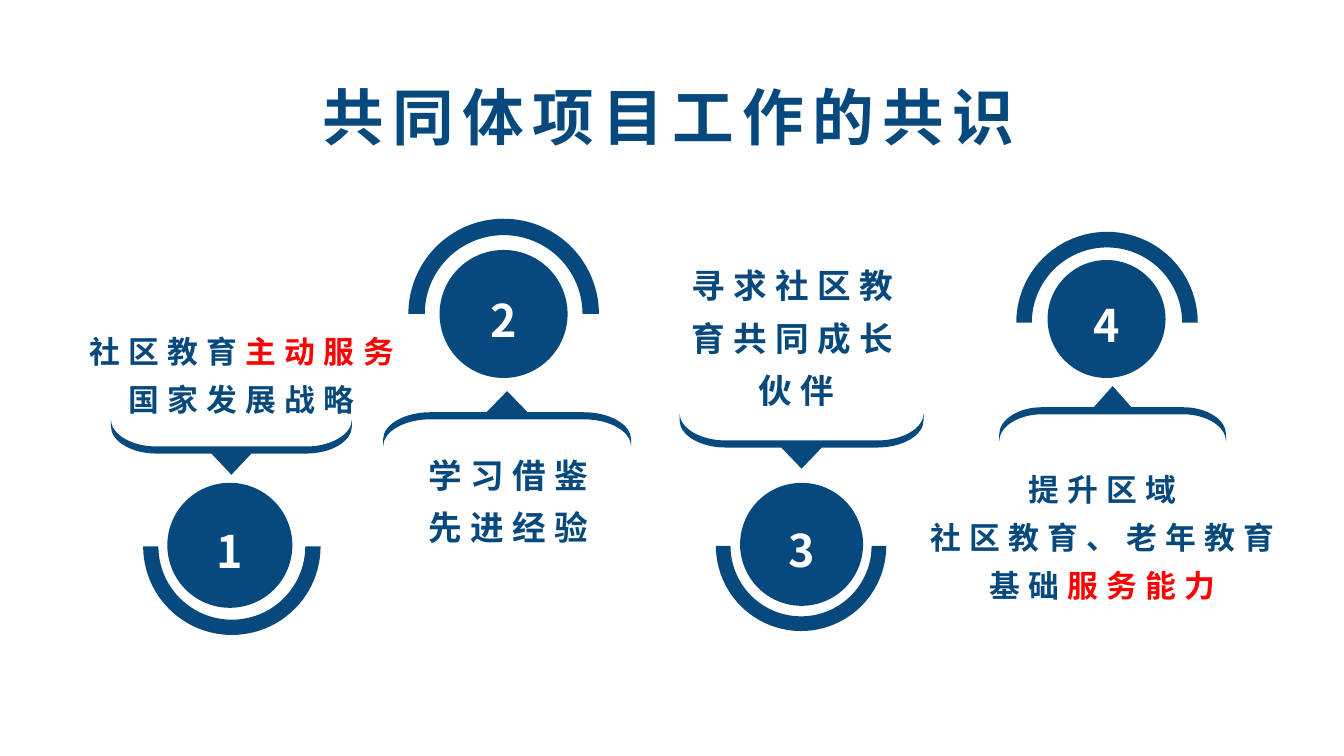
"""Builds the slide of four numbered points of consensus."""
from dataclasses import dataclass

from lxml.etree import SubElement as Child
from pptx import Presentation as Deck
from pptx.dml.color import RGBColor as Color
from pptx.enum.shapes import MSO_SHAPE as Kind
from pptx.enum.text import MSO_ANCHOR as Anchor, PP_ALIGN as Align
from pptx.oxml.ns import qn
from pptx.shapes.autoshape import Shape
from pptx.slide import Slide
from pptx.text.text import TextFrame as Frame
from pptx.util import Inches, Pt

HUES = {"navy": "07497D", "red": "FF0000", "white": "FFFFFF"}
FACE = "Noto Sans CJK SC"
SIDES = ("left", "right", "top", "bottom")
ROUND = 0.55
BENDS = {3: True, 5: False, 7: True, 9: False}


@dataclass
class Text:
    lines: tuple[str, ...]
    size: float
    hue: str = "navy"
    lead: float = 1.3
    track: int = 600
    anchor: Anchor = Anchor.TOP
    bare: bool = True


@dataclass
class Step:
    ball: tuple[float, float, float]
    arc: tuple[float, float, float]
    brace: tuple[float, float, float]
    box: tuple[float, float, float, float]
    text: Text


STEPS = [
    Step((1.66, 4.79, 1.24), (1.42, 4.54, 1.76), (1.1, 4.16, 2.39), (0.59, 2.76, 3.61, 1.38),
         Text(("社区教育|主动服务", "国家发展战略"), 22, anchor=Anchor.BOTTOM)),
    Step((4.36, 2.48, 1.27), (4.05, 2.17, 1.89), (3.8, 3.88, 2.46), (3.93, 4.39, 2.22, 1.44),
         Text(("学习借鉴", "先进经验"), 24)),
    Step((7.34, 4.79, 1.22), (7.1, 4.57, 1.69), (6.74, 4.1, 2.42), (6.69, 2.44, 2.42, 1.63),
         Text(("寻求社区教育共同成长伙伴",), 24, anchor=Anchor.BOTTOM)),
    Step((10.39, 2.58, 1.17), (10.08, 2.3, 1.8), (9.91, 3.83, 2.25), (9.16, 4.56, 3.55, 1.44),
         Text(("提升区域", "社区教育、老年教育", "基础|服务能力"), 22)),
]


def style(item: object, form: dict[str, object]) -> None:
    for key, value in form.items():
        setattr(item, key, value)


def write(frame: Frame, text: Text) -> None:
    style(frame, {"word_wrap": True, "vertical_anchor": text.anchor})
    if text.bare:
        style(frame, {f"margin_{side}": 0 for side in SIDES})
    for row, line in enumerate(text.lines):
        para = frame.add_paragraph() if row else frame.paragraphs[0]
        style(para, {"alignment": Align.CENTER, "line_spacing": text.lead})
        for part, words in enumerate(line.split("|")):
            run = para.add_run()
            run.text = words
            style(run.font, {"name": FACE, "size": Pt(text.size), "bold": True})
            run.font.color.rgb = Color.from_string(HUES["red" if part else text.hue])
            props = run.font._element
            if text.track:
                props.set("spc", str(text.track))
            Child(props, qn("a:ea")).set("typeface", FACE)


def paint(shape: Shape) -> Shape:
    shape.shadow.inherit = False
    shape.fill.solid()
    shape.fill.fore_color.rgb = Color.from_string(HUES["navy"])
    shape.line.fill.background()
    return shape


def add_round(slide: Slide, kind: Kind, spot: tuple[float, float, float]) -> Shape:
    left, top, size = map(Inches, spot)
    return paint(slide.shapes.add_shape(kind, left, top, size, size))


def bend(shape: Shape) -> None:
    track = next(shape._element.iter(qn("a:path")))
    marks = [(int(dot.get("x")), int(dot.get("y"))) for dot in track.iter(qn("a:pt"))]
    for spot, flat in BENDS.items():
        (ax, ay), (bx, by) = marks[spot - 1:spot + 1]
        dx, dy = round(ROUND * (bx - ax)), round(ROUND * (by - ay))
        pulls = [(ax + dx, ay), (bx, by - dy)] if flat else [(ax, ay + dy), (bx - dx, by)]
        curve = track.makeelement(qn("a:cubicBezTo"))
        for x, y in [*pulls, (bx, by)]:
            style_dot = {"x": str(x), "y": str(y)}
            Child(curve, qn("a:pt"), style_dot)
        track.replace(track[spot], curve)


def add_brace(slide: Slide, spot: tuple[float, float, float], down: bool) -> None:
    left, top, width = spot
    high, drop, band, half = 0.55, 0.27, 0.07, width / 2
    neck, rise = half - 0.19 * width, high - band - drop
    side = [(0.083 * width, rise), (neck, rise), (half, high - band),
            (half, high), (neck, rise + band)]
    edge = [(0, 0), *side, *((-x, y) for x, y in reversed(side))]
    dots = [(Inches(left + half + x), Inches(top + (high - y if down else y))) for x, y in edge]
    path = slide.shapes.build_freeform(*dots[0])
    path.add_line_segments(dots[1:])
    bend(paint(path.convert_to_shape()))


def add_text(slide: Slide, box: tuple[float, float, float, float], text: Text) -> None:
    write(slide.shapes.add_textbox(*map(Inches, box)).text_frame, text)


def add_step(slide: Slide, num: int, step: Step) -> None:
    down = num % 2 == 1
    ball = add_round(slide, Kind.OVAL, step.ball)
    write(ball.text_frame, Text((str(num),), 32, "white", 1.2, 0, Anchor.MIDDLE))
    arc = add_round(slide, Kind.BLOCK_ARC, step.arc)
    for spot, value in enumerate((108, 0, 0.086)):
        arc.adjustments[spot] = value
    if down:
        arc._element.spPr.xfrm.set("flipV", "1")
    add_brace(slide, step.brace, down)
    add_text(slide, step.box, step.text)


def main() -> None:
    deck = Deck()
    style(deck, {"slide_width": Inches(13.33), "slide_height": Inches(7.5)})
    slide = deck.slides.add_slide(deck.slide_layouts[6])
    for num, step in enumerate(STEPS, 1):
        add_step(slide, num, step)
    add_text(slide, (3.02, 0.68, 7.23, 0.86),
             Text(("共同体项目工作的共识",), 44, lead=1.1, anchor=Anchor.MIDDLE, bare=False))
    deck.save("out.pptx")


if __name__ == "__main__":
    main()
